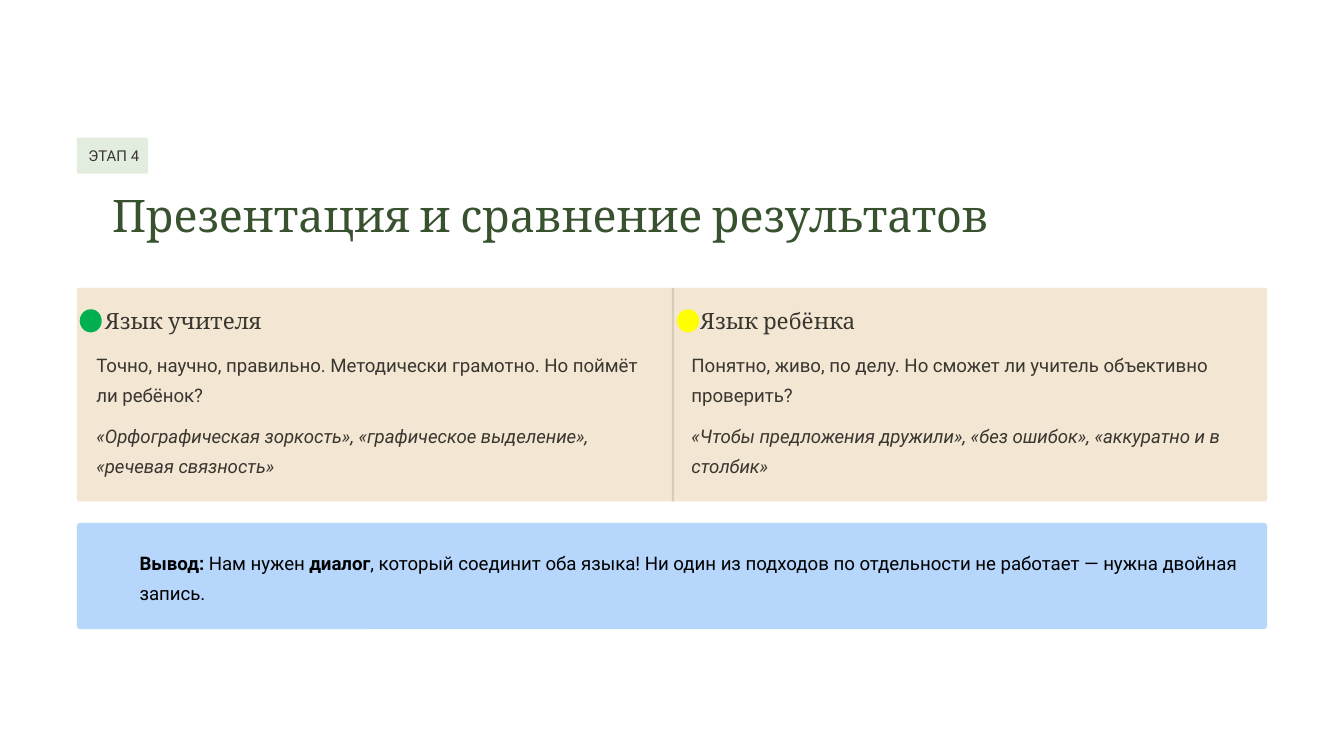
from pptx import Presentation
from pptx.dml.color import RGBColor
from pptx.enum import shapes, text
from pptx.util import Pt

GREEN_TINT = RGBColor(0xE2, 0xEC, 0xDF)
DARK_GREEN = RGBColor(0x38, 0x51, 0x2F)
INK = RGBColor(0x3A, 0x36, 0x30)
BLACK = RGBColor(0, 0, 0)
SAND = RGBColor(0xF3, 0xE7, 0xD4)
SAND_DARK = RGBColor(0xD9, 0xCD, 0xBA)
SKY = RGBColor(0xB6, 0xD6, 0xFC)
GREEN = RGBColor(0x00, 0xB0, 0x50)
YELLOW = RGBColor(0xFF, 0xFF, 0x00)

SHAPE = shapes.MSO_SHAPE
LEFT, WIDTH = 41.2, 637.6
COLUMN = WIDTH / 2
PANEL_TOP, PANEL_HEIGHT = 154.2, 114.4

prs = Presentation()
prs.slide_width, prs.slide_height = Pt(720), Pt(405)
slide = prs.slides.add_slide(prs.slide_layouts[6])


def add_block(kind, x, y, w, h, color, radius=None):
    block = slide.shapes.add_shape(kind, Pt(x), Pt(y), Pt(w), Pt(h))
    block.shadow.inherit = False
    block.fill.solid()
    block.fill.fore_color.rgb = color
    block.line.fill.background()
    if radius is not None:
        block.adjustments[0] = radius
    return block


def add_text(x, y, w, h, paragraphs, font, size, color, spacing, wrap=False):
    frame = slide.shapes.add_textbox(Pt(x), Pt(y), Pt(w), Pt(h)).text_frame
    frame.word_wrap = wrap
    frame.vertical_anchor = text.MSO_ANCHOR.TOP
    frame.margin_left = frame.margin_top = frame.margin_right = frame.margin_bottom = 0
    for i, runs in enumerate(paragraphs):
        paragraph = frame.add_paragraph() if i else frame.paragraphs[0]
        paragraph.line_spacing = spacing
        if i < len(paragraphs) - 1:
            paragraph.space_after = Pt(6)
        for words, style in runs:
            run = paragraph.add_run()
            run.text = words
            run.font.name, run.font.size = font, Pt(size)
            run.font.color.rgb = color
            run.font.bold = style == "bold"
            run.font.italic = style == "italic"


add_block(SHAPE.ROUNDED_RECTANGLE, LEFT, 73.7, 38.2, 19.4, GREEN_TINT, 0.06)
add_text(47.4, 75.6, 62, 13, [[("ЭТАП 4", "")]], "Roboto", 8, INK, 1.33)
add_text(60, 99.4, 489, 30, [[("Презентация и сравнение результатов", "")]],
         "Cambria", 24, DARK_GREEN, 1.04)

add_block(SHAPE.ROUNDED_RECTANGLE, LEFT, PANEL_TOP, WIDTH, PANEL_HEIGHT, SAND, 0.01)
add_block(SHAPE.RECTANGLE, LEFT + COLUMN, PANEL_TOP, 1.2, PANEL_HEIGHT, SAND_DARK)

languages = [
    ("Язык учителя", GREEN, 43.2,
     "Точно, научно, правильно. Методически грамотно. Но поймёт ли ребёнок?",
     "«Орфографическая зоркость», «графическое выделение», «речевая связность»"),
    ("Язык ребёнка", YELLOW, 363.2,
     "Понятно, живо, по делу. Но сможет ли учитель объективно проверить?",
     "«Чтобы предложения дружили», «без ошибок», «аккуратно и в столбик»"),
]
for i, (heading, color, marker_left, summary, quotes) in enumerate(languages):
    x = LEFT + i * COLUMN
    add_text(x + 15.2, 164.2, 116, 16, [[(heading, "")]], "Cambria", 12, INK, 1.04)
    add_text(x + 10.4, 185.8, 298, 72, [[(summary, "")], [(quotes, "italic")]],
             "Roboto", 10, INK, 1.33, wrap=True)
    marker = add_block(SHAPE.FLOWCHART_CONNECTOR, marker_left, 166.2, 10.8, 11.4, color)
    marker.line.color.rgb = color
    marker.line.width = Pt(1)

add_block(SHAPE.ROUNDED_RECTANGLE, LEFT, 280.2, WIDTH, 56.8, SKY, 0.03)
conclusion = [
    ("Вывод:", "bold"),
    (" Нам нужен ", ""),
    ("диалог", "bold"),
    (", который соединит оба языка! Ни один из подходов по отдельности "
     "не работает — нужна двойная запись.", ""),
]
add_text(74.8, 291.6, 594, 33, [conclusion], "Roboto", 10, BLACK, 1.33, wrap=True)

prs.save("out.pptx")
